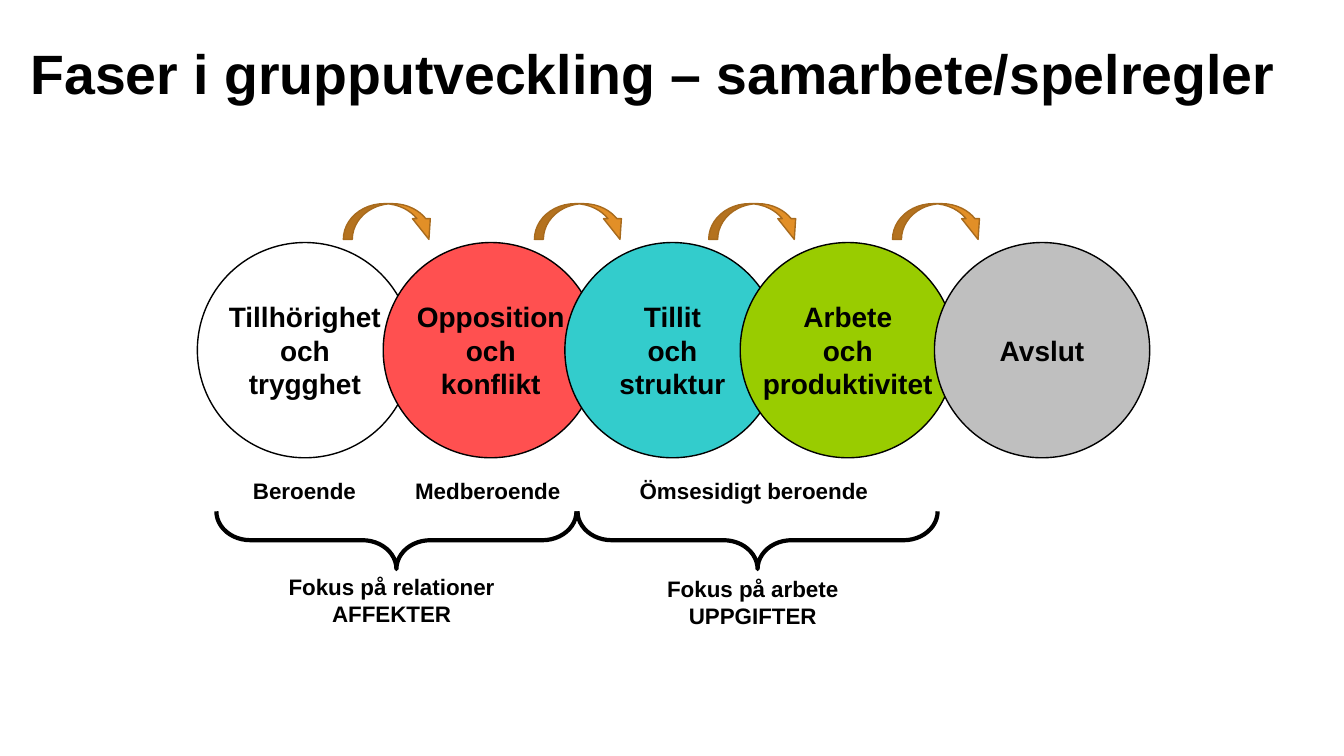
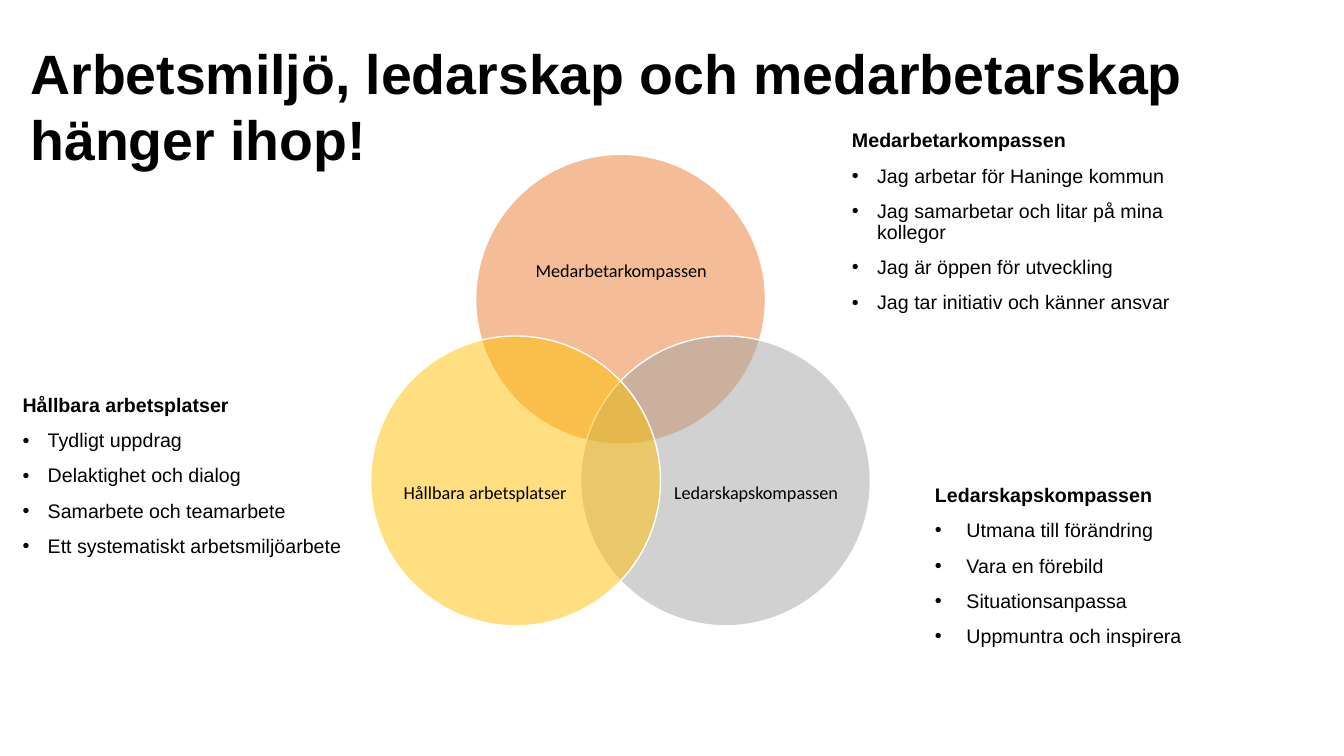
from lxml import etree
from pptx import Presentation
from pptx.dml.color import RGBColor
from pptx.enum.shapes import MSO_SHAPE as SHAPE
from pptx.enum.text import MSO_ANCHOR as ANCHOR, PP_ALIGN as ALIGN
from pptx.oxml.ns import qn
from pptx.util import Emu, Pt

PX = 9525  # EMU per px; the slide is 1280 x 720 px
BLACK, WHITE = "000000", "FFFFFF"
ARROW_FILL, ARROW_LINE = "E28F27", "A76A1D"

# Text formats
TITLE = {"name": "Arial", "size": Pt(39.6), "bold": True}
PHASE = {"name": "Arial", "size": Pt(20), "bold": True}
LABEL = {"name": "Arial", "size": Pt(16), "bold": True}
VENN = {"name": "Calibri", "size": Pt(13), "bold": False}
HEADING = {"name": "Arial", "size": Pt(14), "bold": True}
ITEM = {**HEADING, "bold": False}


def px(*values):
    return [Emu(v * PX) for v in values]


def rgb(color):
    return RGBColor.from_string(color)


def set_attrs(obj, values):
    for name, value in values.items():
        setattr(obj, name, value)


def add_run(p, text, fmt):
    r = p.add_run()
    r.text = text
    set_attrs(r.font, fmt)
    r.font.color.rgb = rgb(BLACK)


def write_lines(tf, text, fmt, align):
    """Write each line of the text as a paragraph."""
    for i, line in enumerate(text.split("\n")):
        p = tf.paragraphs[0] if i == 0 else tf.add_paragraph()
        p.alignment = align
        add_run(p, line, fmt)


def clear_margins(tf):
    set_attrs(tf, dict.fromkeys(
        ("margin_left", "margin_top", "margin_right", "margin_bottom"), 0))


def add_text(slide, box, text, fmt, align=ALIGN.CENTER, wrap=True,
             inset=False, anchor=ANCHOR.TOP):
    tf = slide.shapes.add_textbox(*px(*box)).text_frame
    set_attrs(tf, {"word_wrap": wrap, "vertical_anchor": anchor})
    if not inset:
        clear_margins(tf)
    write_lines(tf, text, fmt, align)


def add_shape(slide, kind, box, fill=None, line=BLACK, width=1, alpha=None):
    sp = slide.shapes.add_shape(kind, *px(*box))
    sp.shadow.inherit = False
    if fill:
        sp.fill.solid()
        sp.fill.fore_color.rgb = rgb(fill)
    else:
        sp.fill.background()
    if alpha:
        color = sp._element.spPr.find(qn("a:solidFill")).find(qn("a:srgbClr"))
        etree.SubElement(color, qn("a:alpha")).set("val", str(alpha * 1000))
    sp.line.color.rgb = rgb(line)
    sp.line.width = Pt(width)
    return sp


def add_title(slide, text):
    add_text(slide, (29, 37, 1224, 76), text, TITLE, ALIGN.LEFT)


def add_phase(slide, left, color, text):
    sp = add_shape(slide, SHAPE.OVAL, (left, 231, 205, 205), color)
    tf = sp.text_frame
    set_attrs(tf, {"word_wrap": False, "vertical_anchor": ANCHOR.MIDDLE})
    clear_margins(tf)
    write_lines(tf, text, PHASE, ALIGN.CENTER)


def add_arrow(slide, left):
    sp = add_shape(slide, SHAPE.CURVED_DOWN_ARROW, (left, 194, 90, 34),
                   ARROW_FILL, ARROW_LINE)
    for i, value in enumerate((0.25, 0.5, 0.58)):
        sp.adjustments[i] = value


def add_brace(slide, left):
    """Add a brace that lies below the phases, pointing down."""
    length, depth, top = 343, 55, 487
    box = (left + (length - depth) // 2, top - (length - depth) // 2,
           depth, length)
    sp = add_shape(slide, SHAPE.RIGHT_BRACE, box, width=3)
    sp.rotation = 90
    sp.adjustments[0] = 0.59


def add_bullet(p, indent):
    pPr = p._p.get_or_add_pPr()
    pPr.set("marL", str(indent * PX))
    pPr.set("indent", str(-indent * PX))
    etree.SubElement(pPr, qn("a:buFont")).set("typeface", "Arial")
    etree.SubElement(pPr, qn("a:buChar")).set("char", "•")


def add_list(slide, box, heading, items, indent=24, spacing=0.9, before=10):
    tf = slide.shapes.add_textbox(*px(*box)).text_frame
    tf.word_wrap = True
    p = tf.paragraphs[0]
    p.line_spacing = spacing
    add_run(p, heading, HEADING)
    for item in items:
        p = tf.add_paragraph()
        add_bullet(p, indent)
        set_attrs(p, {"line_spacing": spacing, "space_before": Pt(before)})
        add_run(p, item, ITEM)


def build_phases(slide):
    add_title(slide, "Faser i grupputveckling – samarbete/spelregler")
    for left, color, text in (
            (188, WHITE, "Tillhörighet\noch\ntrygghet"),
            (365, "FF5050", "Opposition\noch\nkonflikt"),
            (538, "33CCCC", "Tillit\noch\nstruktur"),
            (705, "99CC00", "Arbete\noch\nproduktivitet"),
            (890, "BFBFBF", "Avslut")):
        add_phase(slide, left, color, text)
    for left in (327, 509, 675, 850):
        add_arrow(slide, left)

    # Dependence and focus below the phases
    for left in (206, 550):
        add_brace(slide, left)
    for box, text in (
            ((231, 450, 118, 36), "Beroende"),
            ((385, 450, 159, 36), "Medberoende"),
            ((598, 450, 240, 36), "Ömsesidigt beroende"),
            ((264, 541, 218, 61), "Fokus på relationer\nAFFEKTER"),
            ((625, 543, 184, 61), "Fokus på arbete\nUPPGIFTER")):
        add_text(slide, box, text, LABEL, wrap=False, inset=True)


def build_compasses(slide):
    add_title(slide, "Arbetsmiljö, ledarskap och medarbetarskap hänger ihop!")

    # Venn diagram
    for left, top, color, label_box, text in (
            (453, 147, "ED7D31", (490, 195, 203, 125), "Medarbetarkompassen"),
            (553, 320, "A5A5A5", (637, 392, 166, 153), "Ledarskapskompassen"),
            (353, 320, "FFC000", (379, 392, 166, 153),
             "Hållbara arbetsplatser")):
        add_shape(slide, SHAPE.OVAL, (left, top, 276, 276), color, WHITE,
                  alpha=50)
        add_text(slide, label_box, text, VENN, anchor=ANCHOR.MIDDLE)

    # Explanations
    add_list(slide, (12, 372, 410, 199), "Hållbara arbetsplatser", (
        "Tydligt uppdrag",
        "Delaktighet och dialog",
        "Samarbete och teamarbete",
        "Ett systematiskt arbetsmiljöarbete"))
    add_list(slide, (802, 120, 328, 159), "Medarbetarkompassen", (
        "Jag arbetar för Haninge kommun",
        "Jag samarbetar och litar på mina kollegor",
        "Jag är öppen för utveckling",
        "Jag tar initiativ och känner ansvar"))
    add_list(slide, (881, 444, 273, 209), "Ledarskapskompassen", (
        "Utmana till förändring",
        "Vara en förebild",
        "Situationsanpassa",
        "Uppmuntra och inspirera"), indent=30, spacing=1.5, before=0)


def main():
    prs = Presentation()
    prs.slide_width, prs.slide_height = px(1280, 720)
    for build in (build_phases, build_compasses):
        build(prs.slides.add_slide(prs.slide_layouts[6]))
    prs.save("out.pptx")


if __name__ == "__main__":
    main()
